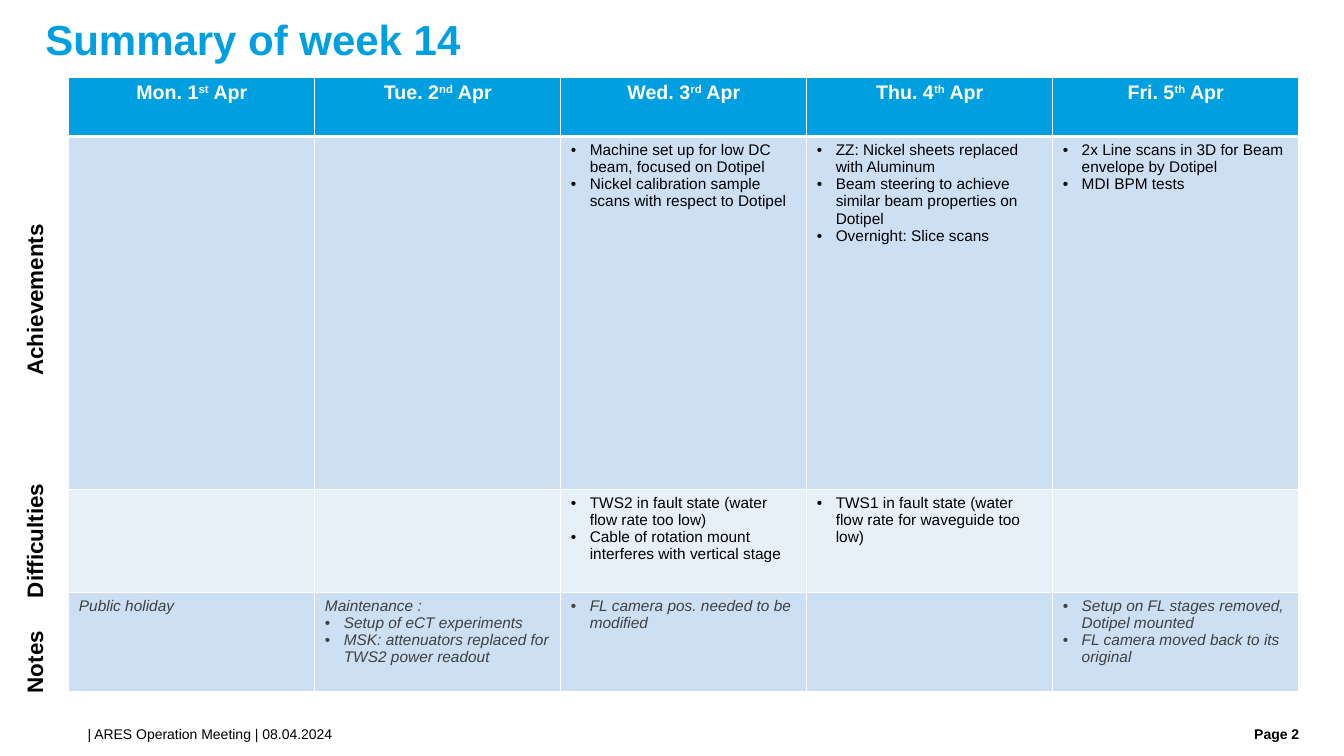
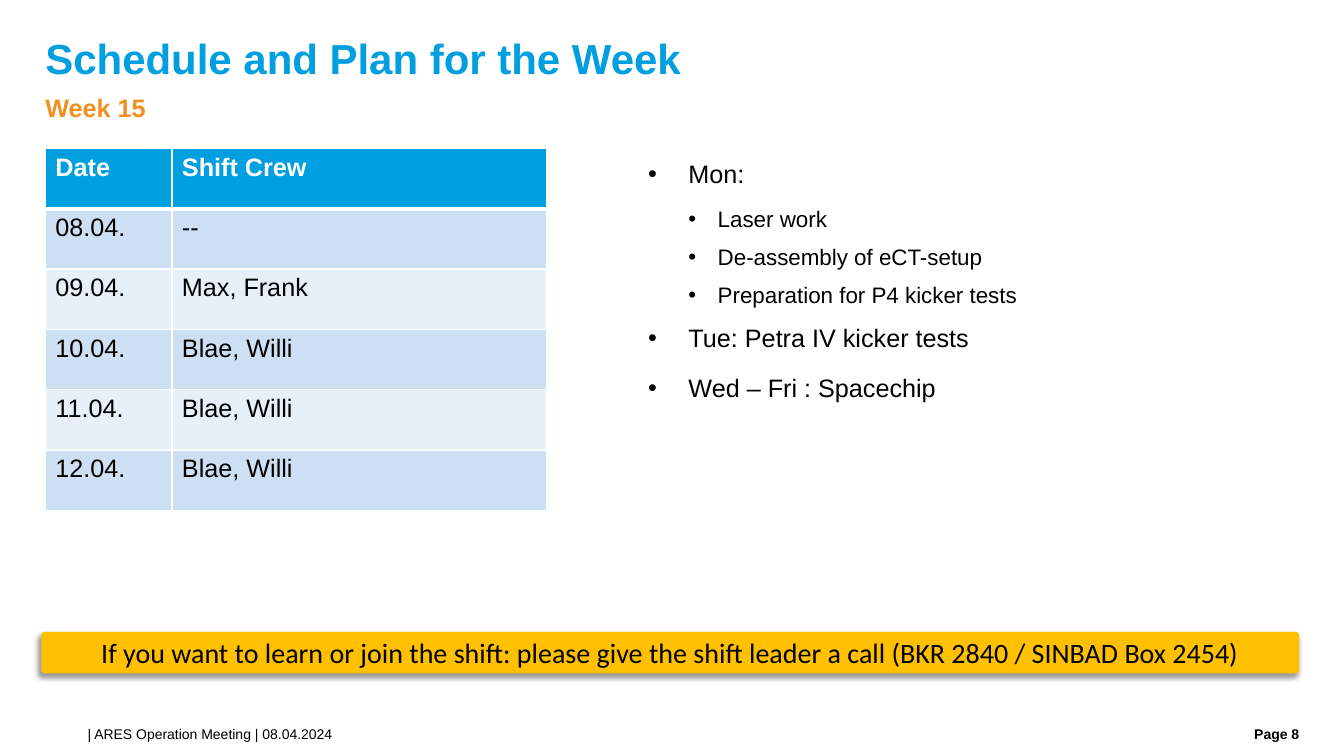
from dataclasses import dataclass, field, replace

from lxml.etree import SubElement
from pptx import Presentation
from pptx.dml.color import RGBColor
from pptx.enum.shapes import MSO_SHAPE as Shape
from pptx.enum.text import MSO_ANCHOR as Anchor, MSO_AUTO_SIZE as AutoSize, PP_ALIGN as Align
from pptx.oxml.ns import qn
from pptx.util import Pt


@dataclass(frozen=True)
class Style:
    """Type style of a run."""
    size: float
    color: str = "000000"
    bold: bool = False
    italic: bool = False
    name: str = "Arial"


@dataclass(frozen=True)
class Theme:
    """Colours and type styles shared by the slides."""
    blue: str = "009FDF"
    white: str = "FFFFFF"
    amber: str = "FFC000"
    shadow: str = "000000"
    bands: tuple = ("CCDFF3", "E7F0F9")
    title: Style = Style(30, "009FDF", bold=True)
    subtitle: Style = Style(18, "F18F1F", bold=True)
    footer: Style = Style(10)
    page: Style = Style(10, bold=True)
    row_label: Style = Style(16, bold=True)
    day: Style = Style(14, "FFFFFF", bold=True)
    entry: Style = Style(11)
    note: Style = Style(11, "404040", italic=True)
    crew_head: Style = Style(18, "FFFFFF", bold=True)
    crew: Style = Style(18)
    plan: Style = Style(18)
    plan_detail: Style = Style(16)
    callout: Style = Style(20, name="Calibri")


THEME = Theme()
LEFT, CONTENT_WIDTH, RIGHT = 32.4, 895.6, 928


@dataclass(frozen=True)
class Line:
    """One paragraph, with an optional superscript and the text after it."""
    text: str
    style: Style
    raised: str = ""
    tail: str = ""
    layout: dict = field(default_factory=dict)
    bullet: tuple = ()


def apply_format(target, values):
    """Set each named attribute of the target."""
    for name, value in values.items():
        setattr(target, name, value)


def add_element(parent, tag, **attributes):
    """Append a DrawingML element and return it."""
    return SubElement(parent, qn(f"a:{tag}"), {key: str(value) for key, value in attributes.items()})


def add_bullet(paragraph, left, hanging):
    """Give the paragraph a hanging round bullet."""
    properties = paragraph._p.get_or_add_pPr()
    properties.set("marL", str(Pt(left)))
    properties.set("indent", str(-Pt(hanging)))
    add_element(properties, "buFont", typeface="Arial")
    add_element(properties, "buChar", char="•")


def add_run(paragraph, text, style, raised=False):
    """Add a styled run, raised when it is a superscript."""
    run = paragraph.add_run()
    run.text = text
    apply_format(run.font, {"size": Pt(style.size), "bold": style.bold,
                            "italic": style.italic, "name": style.name})
    run.font.color.rgb = RGBColor.from_string(style.color)
    if raised:
        run._r.get_or_add_rPr().set("baseline", "30000")


def write_lines(frame, lines):
    """Fill the text frame with one paragraph per line."""
    for index, line in enumerate(lines):
        paragraph = frame.add_paragraph() if index else frame.paragraphs[0]
        if line.bullet:
            add_bullet(paragraph, *line.bullet)
        apply_format(paragraph, line.layout)
        for text, raised in ((line.text, False), (line.raised, True), (line.tail, False)):
            if text:
                add_run(paragraph, text, line.style, raised)


def add_text(slide, left, top, width, height, *lines):
    """Add a wrapping text box without insets."""
    frame = slide.shapes.add_textbox(Pt(left), Pt(top), Pt(width), Pt(height)).text_frame
    apply_format(frame, {"word_wrap": True, "margin_left": 0, "margin_right": 0,
                         "margin_top": 0, "margin_bottom": 0})
    write_lines(frame, lines)


def add_row_label(slide, text, middle, length):
    """Add a label that reads upwards beside the table."""
    height = 26.6
    shape = slide.shapes.add_textbox(Pt(24.5 - length / 2), Pt(middle - height / 2),
                                     Pt(length), Pt(height))
    shape.rotation = 270
    apply_format(shape.text_frame, {"word_wrap": False, "auto_size": AutoSize.SHAPE_TO_FIT_TEXT})
    write_lines(shape.text_frame, [Line(text, THEME.row_label)])


def add_borders(cell, row):
    """Draw white cell borders, thick beneath the header."""
    properties = cell._tc.get_or_add_tcPr()
    widths = {"lnL": 1, "lnR": 1, "lnT": 3 if row == 1 else 1, "lnB": 1 if row else 3}
    for tag, width in widths.items():
        border = add_element(properties, tag, w=Pt(width))
        add_element(add_element(border, "solidFill"), "srgbClr", val=THEME.white)


def add_banded_table(slide, left, top, widths, heights, rows):
    """Add a table with a blue header and alternating bands."""
    table = slide.shapes.add_table(len(rows), len(widths), Pt(left), Pt(top),
                                   Pt(sum(widths)), Pt(sum(heights))).table
    for column, width in zip(table.columns, widths):
        column.width = Pt(width)
    for row, (height, contents) in enumerate(zip(heights, rows)):
        table.rows[row].height = Pt(height)
        for column, lines in enumerate(contents):
            cell = table.cell(row, column)
            add_borders(cell, row)
            cell.fill.solid()
            color = THEME.bands[(row - 1) % 2] if row else THEME.blue
            cell.fill.fore_color.rgb = RGBColor.from_string(color)
            write_lines(cell.text_frame, lines)


def add_callout(slide, text):
    """Add the rounded amber bar with a soft shadow."""
    shape = slide.shapes.add_shape(Shape.ROUNDED_RECTANGLE, Pt(29.5), Pt(451.4),
                                   Pt(RIGHT - 29.5), Pt(29.6))
    shape.adjustments[0] = 0.085
    shape.fill.solid()
    shape.fill.fore_color.rgb = RGBColor.from_string(THEME.amber)
    shape.line.fill.background()
    effects = add_element(shape._element.spPr, "effectLst")
    shadow = add_element(effects, "outerShdw", blurRad=Pt(4), dist=Pt(3),
                         dir=135 * 60000, algn="tr", rotWithShape=0)
    add_element(add_element(shadow, "srgbClr", val=THEME.shadow), "alpha", val=40000)
    apply_format(shape.text_frame, {"word_wrap": True, "vertical_anchor": Anchor.MIDDLE})
    write_lines(shape.text_frame, [Line(text, THEME.callout, layout={"alignment": Align.CENTER})])


def add_slide(presentation, title, title_top, page):
    """Add a blank slide with its title, footer and page number."""
    slide = presentation.slides.add_slide(presentation.slide_layouts[6])
    add_text(slide, LEFT, title_top, CONTENT_WIDTH, 35.3,
             Line(title, THEME.title, layout={"line_spacing": 0.9}))
    add_text(slide, 62.6, 518.4, 783.4, 14.4,
             Line("| ARES Operation Meeting | 08.04.2024", THEME.footer))
    add_text(slide, RIGHT - 73.4, 518.4, 73.4, 14.4,
             Line(f"Page {page}", THEME.page, layout={"alignment": Align.RIGHT}))
    return slide


def bulleted(style, *texts):
    """Return bulleted table lines in one style."""
    return [Line(text, style, bullet=(13.5, 13.5)) for text in texts]


def build_summary(presentation):
    """Build the week summary slide."""
    slide = add_slide(presentation, "Summary of week 14", 13.7, 2)
    days = [("Mon. 1", "st"), ("Tue. 2", "nd"), ("Wed. 3", "rd"), ("Thu. 4", "th"), ("Fri. 5", "th")]
    header = [[Line(day, THEME.day, ordinal, " Apr", {"alignment": Align.CENTER})]
              for day, ordinal in days]
    achievements = [
        [], [],
        bulleted(THEME.entry, "Machine set up for low DC beam, focused on Dotipel",
                 "Nickel calibration sample scans with respect to Dotipel"),
        bulleted(THEME.entry, "ZZ: Nickel sheets replaced with Aluminum",
                 "Beam steering to achieve similar beam properties on Dotipel",
                 "Overnight: Slice scans"),
        bulleted(THEME.entry, "2x Line scans in 3D for Beam envelope by Dotipel", "MDI BPM tests"),
    ]
    difficulties = [
        [], [],
        bulleted(THEME.entry, "TWS2 in fault state (water flow rate too low)",
                 "Cable of rotation mount interferes with vertical stage"),
        bulleted(THEME.entry, "TWS1 in fault state (water flow rate for waveguide too low)"),
        [],
    ]
    notes = [
        [Line("Public holiday", THEME.note)],
        [Line("Maintenance :", THEME.note)]
        + bulleted(THEME.note, "Setup of eCT experiments",
                   "MSK: attenuators replaced for TWS2 power readout"),
        bulleted(THEME.note, "FL camera pos. needed to be modified"),
        [],
        bulleted(THEME.note, "Setup on FL stages removed, Dotipel mounted",
                 "FL camera moved back to its original"),
    ]
    add_banded_table(slide, 49.2, 55, [175.7] * len(days), [42.5, 252, 73.6, 70.6],
                     [header, achievements, difficulties, notes])
    for text, middle, length in (("Achievements", 213.5, 123.8), ("Difficulties", 385.6, 97.2),
                                 ("Notes", 472.7, 59)):
        add_row_label(slide, text, middle, length)


def build_schedule(presentation):
    """Build the schedule slide."""
    slide = add_slide(presentation, "Schedule and Plan for the Week", 27.4, 8)
    add_text(slide, LEFT, 64.1, CONTENT_WIDTH, 29.5,
             Line("Week 15", THEME.subtitle, layout={"line_spacing": 1.1}))
    add_callout(slide, "If you want to learn or join the shift: please give the shift leader a call "
                       "(BKR 2840 / SINBAD Box 2454)")
    crews = ["--", "Max, Frank"] + ["Blae, Willi"] * 3
    rows = [[[Line(text, THEME.crew_head)] for text in ("Date", "Shift Crew")]]
    rows += [[[Line(f"{day:02}.04.", THEME.crew)], [Line(crew, THEME.crew)]]
             for day, crew in enumerate(crews, 8)]
    add_banded_table(slide, LEFT, 106, [90.4, 268], [43.1] * len(rows), rows)
    topic = Line("", THEME.plan, bullet=(28.8, 28.8),
                 layout={"line_spacing": 1.1, "space_after": Pt(12)})
    detail = Line("", THEME.plan_detail, bullet=(49.7, 20.9),
                  layout={"level": 1, "space_after": Pt(8)})
    plan = [(topic, "Mon:"), (detail, "Laser work"), (detail, "De-assembly of eCT-setup"),
            (detail, "Preparation for P4 kicker tests"), (topic, "Tue: Petra IV kicker tests"),
            (topic, "Wed – Fri : Spacechip")]
    add_text(slide, 463, 110.9, RIGHT - 463, 272.9,
             *(replace(pattern, text=text) for pattern, text in plan))


def main():
    """Build and save the presentation."""
    presentation = Presentation()
    apply_format(presentation, {"slide_width": Pt(960), "slide_height": Pt(540)})
    build_summary(presentation)
    build_schedule(presentation)
    presentation.save("out.pptx")


if __name__ == "__main__":
    main()
